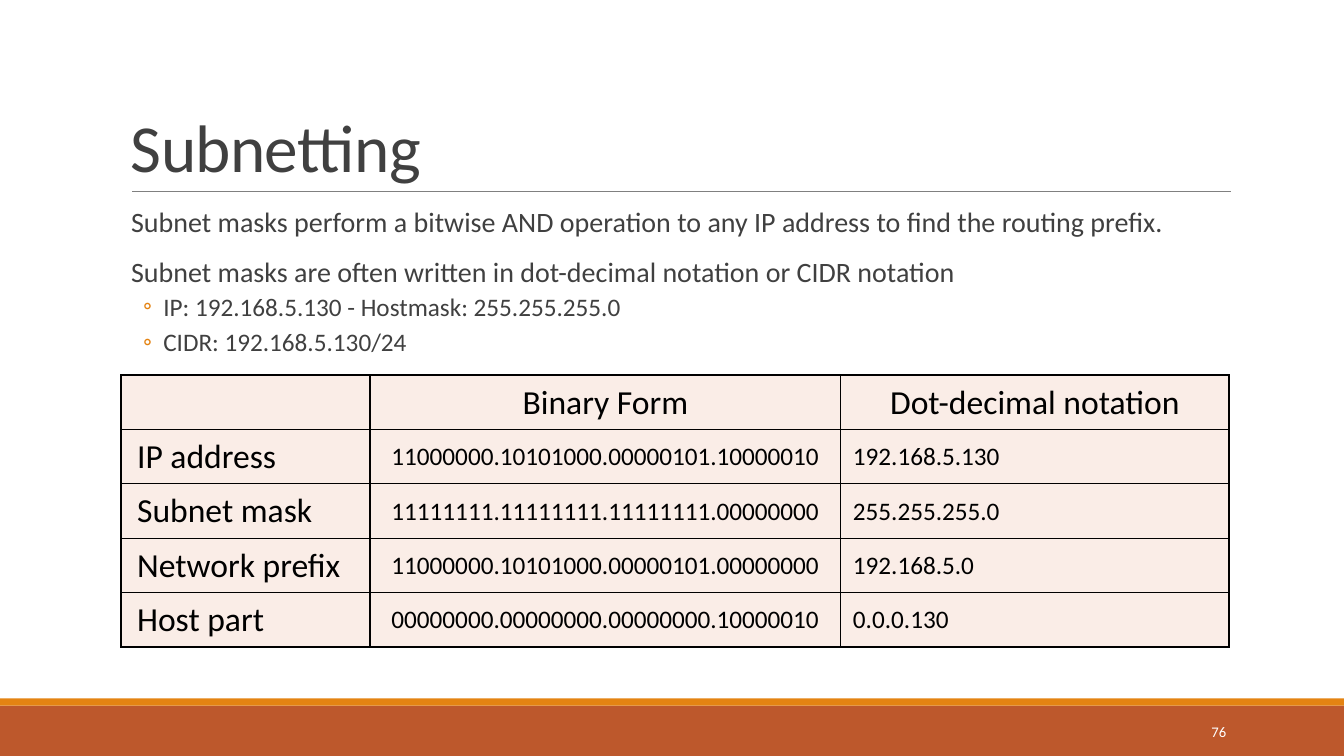
from lxml.etree import SubElement
from pptx import Presentation
from pptx.dml.color import RGBColor
from pptx.enum.shapes import MSO_CONNECTOR, MSO_SHAPE
from pptx.enum.text import MSO_ANCHOR, PP_ALIGN
from pptx.oxml import parse_xml
from pptx.oxml.ns import nsdecls, qn
from pptx.util import Inches, Pt

COLORS = {
    "rust": "BD582C", "orange": "E48312", "rule": "808080", "text": "404040",
    "black": "000000", "white": "FFFFFF", "cell": "FAEDE7",
}


def rgb(name):
    return RGBColor.from_string(COLORS[name])


def write(p, text, size, color, align=PP_ALIGN.LEFT):
    """Fill a paragraph with one formatted run and return the run."""
    p.text = text
    p.alignment = align
    r = p.runs[0]
    r.font.name = "Calibri"
    r.font.size = Pt(size)
    r.font.color.rgb = rgb(color)
    return r


prs = Presentation()
prs.slide_width, prs.slide_height = Inches(13.33), Inches(7.5)
s = prs.slides.add_slide(prs.slide_layouts[6])

# Footer bands and title rule
for top, height, color in [(7, 0.5, "rust"), (6.93, 0.07, "orange")]:
    sp = s.shapes.add_shape(MSO_SHAPE.RECTANGLE, 0, Inches(top),
                            prs.slide_width, Inches(height))
    sp.shadow.inherit = False
    sp.fill.solid()
    sp.fill.fore_color.rgb = rgb(color)
    sp.line.fill.background()

rule = s.shapes.add_connector(MSO_CONNECTOR.STRAIGHT, Inches(1.31), Inches(1.9),
                              Inches(12.21), Inches(1.9))
rule.line.color.rgb = rgb("rule")
rule.line.width = Pt(0.5)
SubElement(rule._element.spPr, qn("a:effectLst"))

# Title
tf = s.shapes.add_textbox(Inches(1.2), Inches(0.31), Inches(11), Inches(1.59)).text_frame
tf.word_wrap = True
tf.vertical_anchor = MSO_ANCHOR.BOTTOM
p = tf.paragraphs[0]
p.line_spacing = 0.85
r = write(p, "Subnetting", 48, "text")
r.font._element.set("spc", "-50")

# Body
body = [
    (0, "Subnet masks perform a bitwise AND operation to any IP address to find the routing prefix."),
    (0, "Subnet masks are often written in dot-decimal notation or CIDR notation"),
    (1, "IP: 192.168.5.130 - Hostmask: 255.255.255.0"),
    (1, "CIDR: 192.168.5.130/24"),
]
tf = s.shapes.add_textbox(Inches(1.2), Inches(2.02), Inches(11), Inches(4.4)).text_frame
tf.word_wrap = True
tf.margin_left = tf.margin_right = 0
for i, (level, text) in enumerate(body):
    p = tf.paragraphs[0] if i == 0 else tf.add_paragraph()
    write(p, text, 18 if level else 20, "text")
    p.level = level
    p.line_spacing = 0.9
    p.space_before, p.space_after = (Pt(2), Pt(4)) if level else (Pt(12), Pt(2))
    pPr = p._p.get_or_add_pPr()
    pPr.set("marL", str(Inches(0.42 if level else 0.1)))
    if level:
        pPr.set("indent", str(Inches(-0.2)))
        color = SubElement(pPr, qn("a:buClr"))
        SubElement(color, qn("a:srgbClr"), val=COLORS["orange"])
        SubElement(pPr, qn("a:buFont"), typeface="Calibri")
        SubElement(pPr, qn("a:buChar"), char="◦")

# Address table
rows = [
    ("", "Binary Form", "Dot-decimal notation"),
    ("IP address", "11000000.10101000.00000101.10000010", "192.168.5.130"),
    ("Subnet mask", "11111111.11111111.11111111.00000000", "255.255.255.0"),
    ("Network prefix", "11000000.10101000.00000101.00000000", "192.168.5.0"),
    ("Host part", "00000000.00000000.00000000.10000010", "0.0.0.130"),
]
widths = [2.47, 4.67, 3.85]
table = s.shapes.add_table(len(rows), len(widths), Inches(1.2), Inches(3.72),
                           Inches(sum(widths)), Inches(2.7)).table
for column, width in zip(table.columns, widths):
    column.width = Inches(width)
for i, row in enumerate(rows):
    table.rows[i].height = Inches(0.54)
    for j, text in enumerate(row):
        cell = table.cell(i, j)
        cell.fill.solid()
        cell.fill.fore_color.rgb = rgb("cell")
        cell.vertical_anchor = MSO_ANCHOR.MIDDLE
        centred = i == 0 or j == 1
        big = i == 0 or j == 0
        cell.margin_left = Inches(0.01 if centred else 0.16 if big else 0.12)
        cell.margin_right = cell.margin_top = Inches(0.01)
        cell.margin_bottom = 0
        if text:
            write(cell.text_frame.paragraphs[0], text, 24 if big else 18, "black",
                  PP_ALIGN.CENTER if centred else PP_ALIGN.LEFT)
        tcPr = cell._tc.get_or_add_tcPr()
        for k, side in enumerate("LRTB"):
            tcPr.insert(k, parse_xml(
                f'<a:ln{side} {nsdecls("a")} w="{Pt(1)}"><a:solidFill>'
                f'<a:srgbClr val="{COLORS["black"]}"/></a:solidFill></a:ln{side}>'))

# Slide number
tf = s.shapes.add_textbox(Inches(10.83), Inches(7.06), Inches(1.43), Inches(0.4)).text_frame
tf.word_wrap = True
tf.vertical_anchor = MSO_ANCHOR.MIDDLE
write(tf.paragraphs[0], "76", 10.5, "white", PP_ALIGN.RIGHT)

prs.save("out.pptx")
